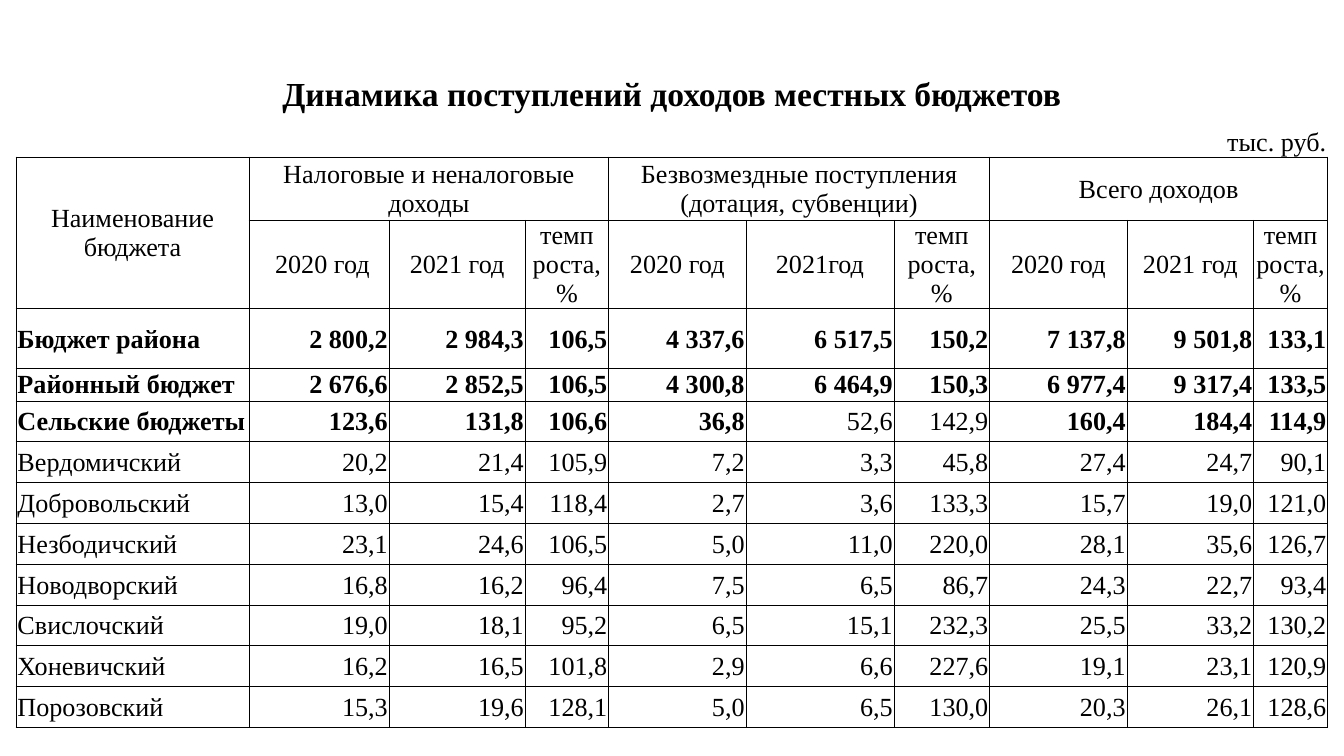
"""Build a slide with a table of local budget revenues."""
from lxml import etree
from pptx import Presentation
from pptx.dml.color import RGBColor
from pptx.enum.text import MSO_ANCHOR, PP_ALIGN
from pptx.oxml.ns import qn
from pptx.util import Inches, Pt

LEFT, MID, RIGHT = PP_ALIGN.LEFT, PP_ALIGN.CENTER, PP_ALIGN.RIGHT
TOP, CENTER, BASE = MSO_ANCHOR.TOP, MSO_ANCHOR.MIDDLE, MSO_ANCHOR.BOTTOM
BLACK = RGBColor(0, 0, 0)
FONT = "Times New Roman"
SIZE = 14

TITLE = "Динамика поступлений доходов местных бюджетов"
UNIT = "тыс. руб."
NAME = "Наименование бюджета"
GROUPS = [
    ("Налоговые и неналоговые доходы", 1, 4),
    ("Безвозмездные поступления (дотация, субвенции)", 5, 8),
    ("Всего доходов", 9, 13),
]
RATE = "темп\nроста, %"
HEADS = [" 2020 год", "2021 год", RATE, "2020 год", "2021год", RATE,
         "2020 год", "2021 год", RATE]
TOTALS = [
    ("Бюджет района", "2 800,2", "2 984,3", "106,5", "4 337,6", "6 517,5", "150,2",
     "7 137,8", "9 501,8", "133,1"),
    ("Районный бюджет", "2 676,6", "2 852,5", "106,5", "4 300,8", "6 464,9", "150,3",
     "6 977,4", "9 317,4", "133,5"),
    ("Сельские бюджеты", "123,6", "131,8", "106,6", "36,8", "52,6", "142,9",
     "160,4", "184,4", "114,9"),
]
LOCAL = [
    ("Вердомичский", "20,2", "21,4", "105,9", "7,2", "3,3", "45,8", "27,4", "24,7", "90,1"),
    ("Добровольский", "13,0", "15,4", "118,4", "2,7", "3,6", "133,3", "15,7", "19,0", "121,0"),
    ("Незбодичский", "23,1", "24,6", "106,5", "5,0", "11,0", "220,0", "28,1", "35,6", "126,7"),
    ("Новодворский", "16,8", "16,2", "96,4", "7,5", "6,5", "86,7", "24,3", "22,7", "93,4"),
    ("Свислочский", "19,0", "18,1", "95,2", "6,5", "15,1", "232,3", "25,5", "33,2", "130,2"),
    ("Хоневичский", "16,2", "16,5", "101,8", "2,9", "6,6", "227,6", "19,1", "23,1", "120,9"),
    ("Порозовский", "15,3", "19,6", "128,1", "5,0", "6,5", "130,0", "20,3", "26,1", "128,6"),
]
PLAIN = {"52,6", "142,9"}

WIDTH = 9.76
COLS = [1.73, 1.04, 0.74, 0.27, 0.62, 0.89, 0.13, 1.1, 0.71, 0.73, 0.29, 0.6, 0.34, 0.55]
ROWS = [0.32, 0.32, 0.47, 0.47, 0.45, 0.24] + [2.43 / 8] * 8
SPANS = [(0, 0), (1, 1), (2, 3), (4, 4), (5, 6), (7, 7), (8, 8), (9, 10), (11, 12), (13, 13)]
GAPS = [(1, 2), (3, 5), (6, 8), (10, 11), (12, 13)]
HEAD, DATA = 2, 4


def edge(cell, tag, drawn):
    line = etree.SubElement(cell._tc.get_or_add_tcPr(), qn("a:" + tag), w=str(Pt(0.5)))
    if drawn:
        fill = etree.SubElement(line, qn("a:solidFill"))
        etree.SubElement(fill, qn("a:srgbClr"), val=str(BLACK))
    else:
        etree.SubElement(line, qn("a:noFill"))


def style(cell, row):
    cell.margin_left = cell.margin_right = cell.margin_top = Inches(0.01)
    cell.margin_bottom = 0
    for tag in ("lnL", "lnR", "lnT", "lnB"):
        edge(cell, tag, row >= HEAD or (row == HEAD - 1 and tag == "lnB"))
    cell.fill.background()
    end = cell.text_frame.paragraphs[0]._p.get_or_add_endParaRPr()
    end.set("sz", str(SIZE * 100))


def write(cell, text, align=MID, anchor=CENTER, size=SIZE, bold=False):
    cell.text = text
    cell.vertical_anchor = anchor
    for para in cell.text_frame.paragraphs:
        para.alignment = align
        for run in para.runs:
            run.font.name, run.font.size = FONT, Pt(size)
            run.font.bold, run.font.color.rgb = bold, BLACK


def join(table, row, first, last, end=None):
    cell = table.cell(row, first)
    if first != last or end:
        cell.merge(table.cell(end or row, last))
    return cell


def build():
    deck = Presentation()
    deck.slide_width = Inches(10)
    deck.slide_height = deck.slide_width * 9 // 16
    slide = deck.slides.add_slide(deck.slide_layouts[6])
    table = slide.shapes.add_table(
        len(ROWS), len(COLS), Inches(0.12), Inches(0.53),
        Inches(WIDTH), Inches(sum(ROWS))).table
    table.first_row = table.horz_banding = False
    for col, width in zip(table.columns, COLS):
        col.width = Inches(width * WIDTH / sum(COLS))
    for num, (row, height) in enumerate(zip(table.rows, ROWS)):
        row.height = Inches(height)
        for cell in row.cells:
            style(cell, num)

    write(join(table, 0, 0, len(COLS) - 1), TITLE, anchor=BASE, size=18, bold=True)
    for first, last in GAPS:
        unit = join(table, 1, first, last)
    write(unit, UNIT, align=RIGHT, anchor=BASE)
    write(join(table, HEAD, 0, 0, end=HEAD + 1), NAME)
    for text, first, last in GROUPS:
        write(join(table, HEAD, first, last), text)
    for text, span in zip(HEADS, SPANS[1:]):
        write(join(table, HEAD + 1, *span), text)
    for num, record in enumerate(TOTALS + LOCAL):
        for text, span in zip(record, SPANS):
            write(join(table, DATA + num, *span), text,
                  align=RIGHT if span[0] else LEFT,
                  anchor=TOP if num == 1 else CENTER,
                  bold=num < len(TOTALS) and text not in PLAIN)
    deck.save("out.pptx")


if __name__ == "__main__":
    build()
